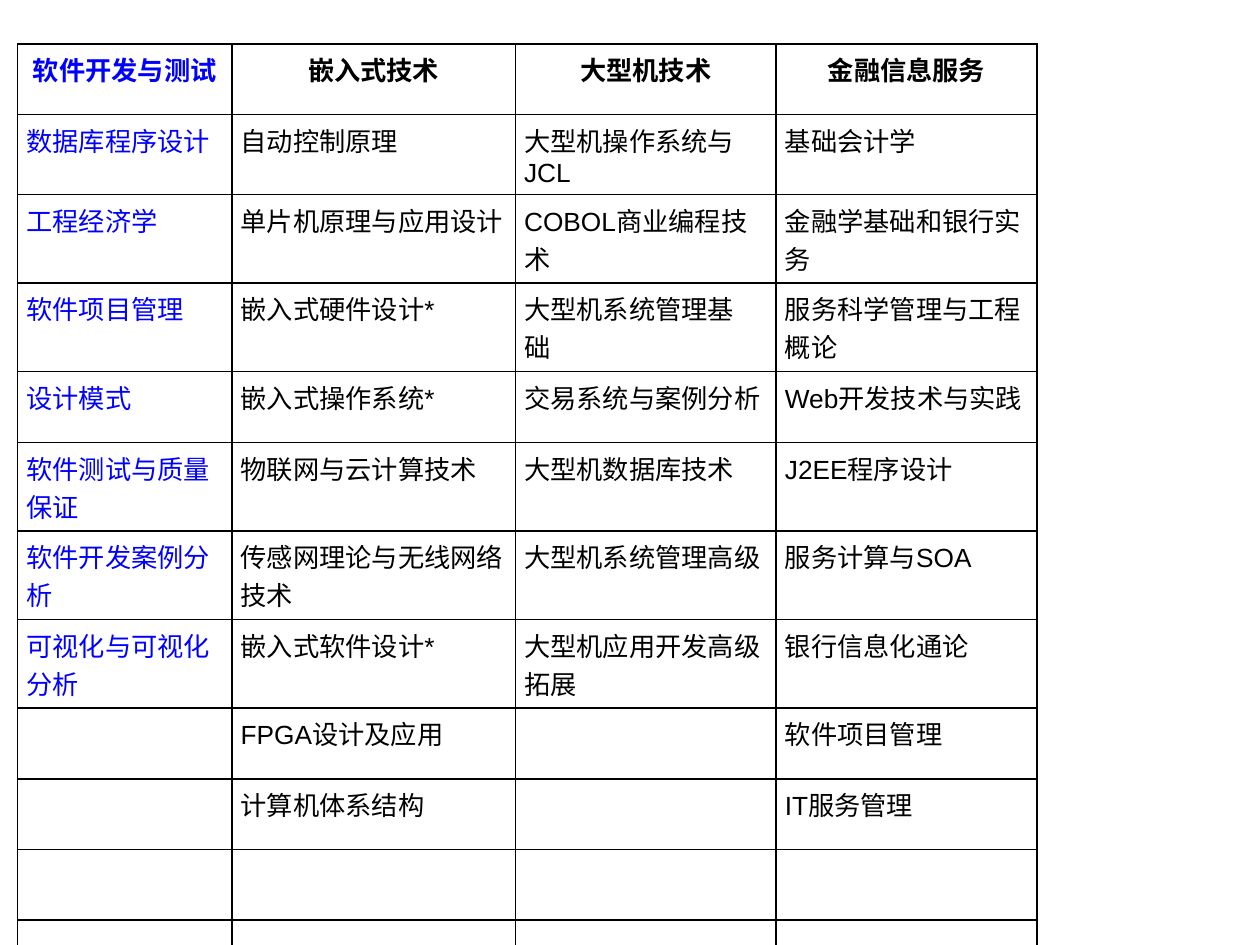
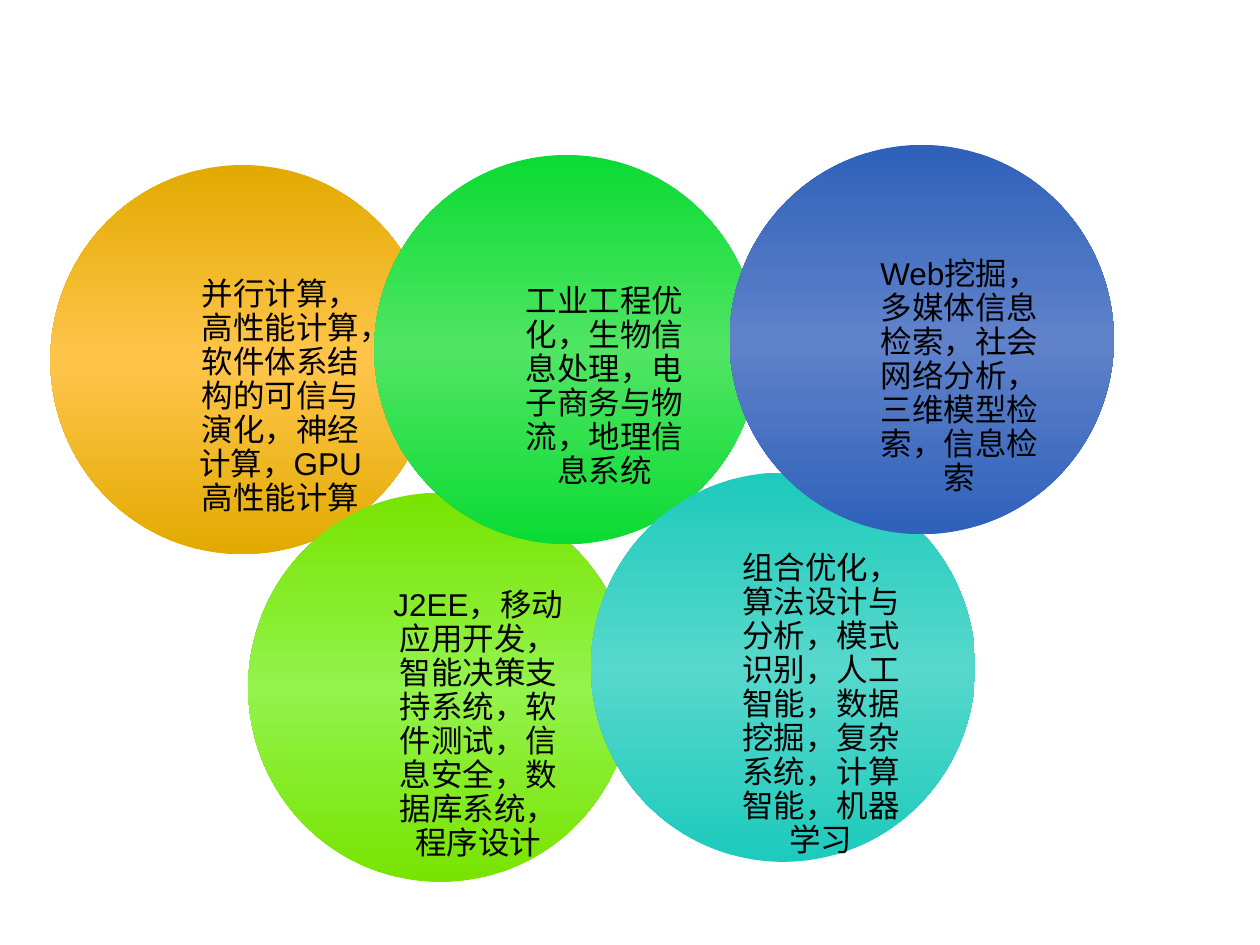
from lxml.etree import SubElement
from pptx import Presentation
from pptx.dml.color import RGBColor
from pptx.enum.shapes import MSO_SHAPE
from pptx.enum.text import MSO_ANCHOR, PP_ALIGN
from pptx.oxml import parse_xml
from pptx.oxml.ns import nsdecls, qn
from pptx.util import Inches, Pt

# The page is a grid of 10 columns by 7.5 rows
COLUMNS, ROWS = 10, 7.5
UNIT = Inches(1)

FONT = "Arial"
BLACK = RGBColor(0x00, 0x00, 0x00)
BLUE = RGBColor(0x00, 0x00, 0xFF)
AMBER, AMBER_LIGHT = RGBColor(0xE2, 0xAA, 0x00), RGBColor(0xFF, 0xC5, 0x4B)
LIME, LIME_LIGHT = RGBColor(0x78, 0xE4, 0x00), RGBColor(0x93, 0xF3, 0x4C)
GREEN, GREEN_LIGHT = RGBColor(0x0B, 0xDB, 0x34), RGBColor(0x50, 0xE5, 0x63)
TEAL, TEAL_LIGHT = RGBColor(0x1D, 0xCA, 0xBC), RGBColor(0x57, 0xD8, 0xCC)
NAVY, NAVY_LIGHT = RGBColor(0x2F, 0x61, 0xBA), RGBColor(0x60, 0x82, 0xCA)

# Course table: one column per specialisation
COURSE_LEFT, COURSE_TOP = 0.14, 0.35
COURSE_WIDTHS = [1.7, 2.25, 2.07, 2.07]
COURSE_ROW_HEIGHT = 0.56
COURSE_ROW_COUNT = 12
COURSES = [
    ["软件开发与测试", "数据库程序设计", "工程经济学", "软件项目管理", "设计模式",
     "软件测试与质量保证", "软件开发案例分析", "可视化与可视化分析"],
    ["嵌入式技术", "自动控制原理", "单片机原理与应用设计", "嵌入式硬件设计*",
     "嵌入式操作系统*", "物联网与云计算技术", "传感网理论与无线网络技术",
     "嵌入式软件设计*", "FPGA设计及应用", "计算机体系结构"],
    ["大型机技术", "大型机操作系统与JCL", "COBOL商业编程技术", "大型机系统管理基础　",
     "交易系统与案例分析", "大型机数据库技术", "大型机系统管理高级",
     "大型机应用开发高级拓展"],
    ["金融信息服务", "基础会计学", "金融学基础和银行实务", "服务科学管理与工程概论",
     "Web开发技术与实践", "J2EE程序设计", "服务计算与SOA", "银行信息化通论",
     "软件项目管理", "IT服务管理"],
]
CELL_FORMAT = {
    "margin_left": Inches(0.07), "margin_right": Inches(0.07),
    "margin_top": Inches(0.05), "margin_bottom": Inches(0.05),
}

# Research circles, back to front: left, top, edge, middle, topics
CIRCLE_WIDTH, CIRCLE_HEIGHT = 3.05, 3.09
CIRCLES = [
    (0.4, 1.31, AMBER, AMBER_LIGHT,
     "并行计算，高性能计算，软件体系结构的可信与演化，神经计算，GPU高性能计算"),
    (1.97, 3.91, LIME, LIME_LIGHT,
     "J2EE，移动应用开发，智能决策支持系统，软件测试，信息安全，数据库系统，程序设计"),
    (2.97, 1.23, GREEN, GREEN_LIGHT,
     "工业工程优化，生物信息处理，电子商务与物流，地理信息系统"),
    (4.69, 3.75, TEAL, TEAL_LIGHT,
     "组合优化，算法设计与分析，模式识别，人工智能，数据挖掘，复杂系统，计算智能，机器学习"),
    (5.79, 1.15, NAVY, NAVY_LIGHT,
     "Web挖掘，多媒体信息检索，社会网络分析，三维模型检索，信息检索"),
]
CIRCLE_FRAME_FORMAT = {
    "word_wrap": True, "vertical_anchor": MSO_ANCHOR.MIDDLE,
    "margin_left": Inches(0.7), "margin_top": Inches(0.7),
    "margin_right": Inches(0.1), "margin_bottom": Inches(0.1),
}


def grid(*lengths):
    """Turn grid lengths into slide lengths."""
    return [round(length * UNIT) for length in lengths]


def apply_format(target, values):
    for name, value in values.items():
        setattr(target, name, value)


def write_text(frame, text, size, color=BLACK, bold=False, align=PP_ALIGN.LEFT):
    para = frame.paragraphs[0]
    para.alignment = align
    span = para.add_run()
    span.text = text
    apply_format(span.font, {"name": FONT, "size": Pt(size), "bold": bold})
    span.font.color.rgb = color
    return para, span


def add_borders(cell):
    properties = cell._tc.get_or_add_tcPr()
    for index, side in enumerate(("lnL", "lnR", "lnT", "lnB")):
        properties.insert(index, parse_xml(
            f'<a:{side} {nsdecls("a")} w="{Pt(1)}"><a:solidFill>'
            f'<a:srgbClr val="{BLACK}"/></a:solidFill></a:{side}>'))


def add_course_table(page):
    left, top, width, height = grid(
        COURSE_LEFT, COURSE_TOP, sum(COURSE_WIDTHS), COURSE_ROW_HEIGHT * COURSE_ROW_COUNT)
    table = page.shapes.add_table(
        COURSE_ROW_COUNT, len(COURSES), left, top, width, height).table
    apply_format(table, {"first_row": False, "horz_banding": False})
    for column, column_width in zip(table.columns, grid(*COURSE_WIDTHS)):
        column.width = column_width
    for cell in table.iter_cells():
        apply_format(cell, CELL_FORMAT)
        cell.fill.background()
        add_borders(cell)
    for column, names in enumerate(COURSES):
        color = BLUE if column == 0 else BLACK
        for row, name in enumerate(names):
            heading = row == 0
            write_text(table.cell(row, column).text_frame, name, 15, color, heading,
                       PP_ALIGN.CENTER if heading else PP_ALIGN.LEFT)


def fill_gradient(shape, edge, middle):
    """Shade a shape downwards from edge to middle and back."""
    shape.fill.gradient()
    shape.fill.gradient_angle = 90
    stops = shape.fill._fill._gradFill.find(qn("a:gsLst"))
    for stop in list(stops):
        stops.remove(stop)
    for position, color in ((0, edge), (50, middle), (100, edge)):
        stop = SubElement(stops, qn("a:gs"), pos=str(position * 1000))
        SubElement(stop, qn("a:srgbClr"), val=str(color))


def add_research_circle(page, left, top, edge, middle, topics):
    circle = page.shapes.add_shape(
        MSO_SHAPE.OVAL, *grid(left, top, CIRCLE_WIDTH, CIRCLE_HEIGHT))
    circle.shadow.inherit = False
    circle.line.fill.background()
    fill_gradient(circle, edge, middle)
    apply_format(circle.text_frame, CIRCLE_FRAME_FORMAT)
    para, span = write_text(circle.text_frame, topics, 18, align=PP_ALIGN.CENTER)
    para.line_spacing = 0.9
    # East Asian characters use the same font
    SubElement(span.font._element, qn("a:ea"), typeface=FONT)


def main():
    deck = Presentation()
    deck.slide_width, deck.slide_height = grid(COLUMNS, ROWS)
    blank = deck.slide_layouts[6]

    # Courses by specialisation
    add_course_table(deck.slides.add_slide(blank))

    # Research directions
    page = deck.slides.add_slide(blank)
    for circle in CIRCLES:
        add_research_circle(page, *circle)

    deck.save("out.pptx")


if __name__ == "__main__":
    main()
